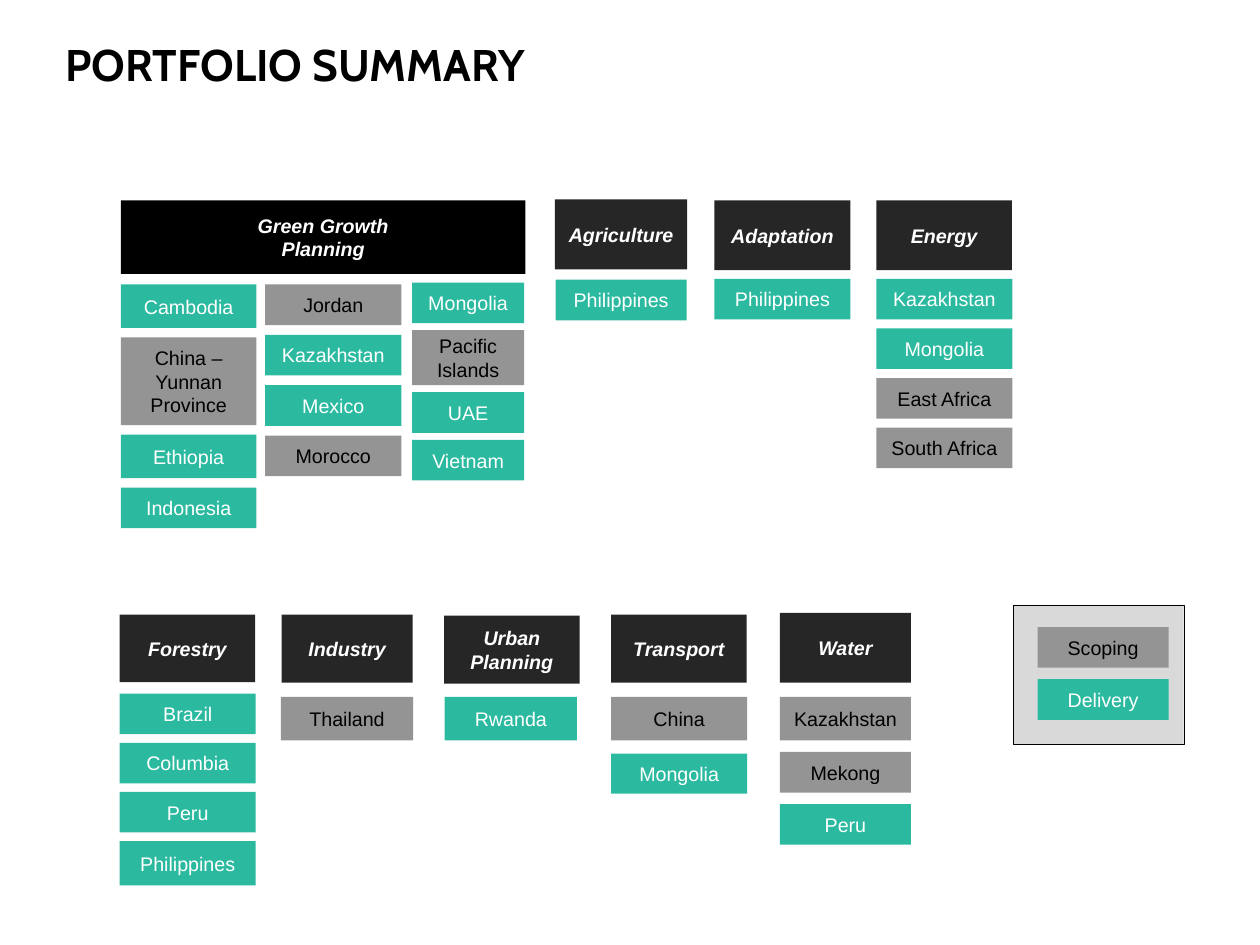
"""Build the portfolio summary slide: countries grouped by sector, coloured by phase."""
from pptx import Presentation
from pptx.dml.color import RGBColor
from pptx.enum.shapes import MSO_SHAPE
from pptx.enum.text import MSO_ANCHOR, PP_ALIGN
from pptx.util import Inches, Pt

BLACK = RGBColor(0x00, 0x00, 0x00)
WHITE = RGBColor(0xFF, 0xFF, 0xFF)
CHARCOAL = RGBColor(0x26, 0x26, 0x26)
GREY = RGBColor(0x94, 0x94, 0x94)
PALE_GREY = RGBColor(0xD9, 0xD9, 0xD9)
TEAL = RGBColor(0x2B, 0xBA, 0xA0)

SCOPING = (GREY, BLACK)
DELIVERY = (TEAL, WHITE)

presentation = Presentation()
presentation.slide_width = Inches(14.22)
presentation.slide_height = Inches(10.67)
slide = presentation.slides.add_slide(presentation.slide_layouts[6])
percent_x = presentation.slide_width / 100
percent_y = presentation.slide_height / 100


def write(frame, text, size=16, font="Arial", color=WHITE, bold=False,
          italic=False, align=PP_ALIGN.CENTER, line_spacing=None):
    frame.word_wrap = True
    frame.vertical_anchor = MSO_ANCHOR.MIDDLE
    frame.text = text
    for paragraph in frame.paragraphs:
        paragraph.alignment = align
        paragraph.line_spacing = line_spacing
        paragraph.font.size = Pt(size)
        paragraph.font.name = font
        paragraph.font.color.rgb = color
        paragraph.font.bold = bold
        paragraph.font.italic = italic


def add_box(left, top, width, height, fill):
    """Add a plain rectangle, measured in percent of the slide."""
    box = slide.shapes.add_shape(
        MSO_SHAPE.RECTANGLE, int(left * percent_x), int(top * percent_y),
        int(width * percent_x), int(height * percent_y))
    box.shadow.inherit = False
    box.fill.solid()
    box.fill.fore_color.rgb = fill
    box.line.fill.background()
    return box


title = slide.shapes.add_textbox(
    int(5.2 * percent_x), int(2.7 * percent_y),
    int(65 * percent_x), int(5.3 * percent_y))
title_frame = title.text_frame
title_frame.margin_left = title_frame.margin_right = 0
title_frame.margin_top = title_frame.margin_bottom = 0
write(title_frame, "PORTFOLIO SUMMARY", size=36, font="Cabin", color=BLACK,
      bold=True, align=PP_ALIGN.LEFT, line_spacing=1.5)

legend_panel = add_box(80.45, 64, 13.5, 14.8, PALE_GREY)
legend_panel.line.color.rgb = BLACK
legend_panel.line.width = Pt(0.25)

# Sector name, left, top, width, height, fill
sectors = [
    ("Green Growth\nPlanning", 9.6, 21.2, 32.1, 7.8, BLACK),
    ("Agriculture", 44.05, 21.1, 10.5, 7.4, CHARCOAL),
    ("Adaptation", 56.7, 21.2, 10.8, 7.4, CHARCOAL),
    ("Energy", 69.55, 21.2, 10.75, 7.4, CHARCOAL),
    ("Forestry", 9.5, 65.05, 10.75, 7.15, CHARCOAL),
    ("Industry", 22.35, 65.05, 10.4, 7.2, CHARCOAL),
    ("Urban Planning", 35.25, 65.15, 10.75, 7.2, CHARCOAL),
    ("Transport", 48.5, 65.05, 10.75, 7.2, CHARCOAL),
    ("Water", 61.9, 64.85, 10.4, 7.4, CHARCOAL),
]
for sector, left, top, width, height, fill in sectors:
    write(add_box(left, top, width, height, fill).text_frame, sector,
          bold=True, italic=True)

# Left, top, width and gap of each stack, then its country, phase and height
stacks = [
    (9.6, 30.1, 10.75, 1.0, [
        ("Cambodia", DELIVERY, 4.6), ("China – Yunnan Province", SCOPING, 9.3),
        ("Ethiopia", DELIVERY, 4.6), ("Indonesia", DELIVERY, 4.3)]),
    (21.05, 30.1, 10.8, 1.03, [
        ("Jordan", SCOPING, 4.3), ("Kazakhstan", DELIVERY, 4.3),
        ("Mexico", DELIVERY, 4.3), ("Morocco", SCOPING, 4.3)]),
    (32.7, 29.9, 8.9, 0.75, [
        ("Mongolia", DELIVERY, 4.3), ("Pacific Islands", SCOPING, 5.8),
        ("UAE", DELIVERY, 4.3), ("Vietnam", DELIVERY, 4.3)]),
    (44.1, 29.6, 10.4, 1, [("Philippines", DELIVERY, 4.3)]),
    (56.7, 29.5, 10.8, 1, [("Philippines", DELIVERY, 4.3)]),
    (69.55, 29.5, 10.8, 0.95, [
        ("Kazakhstan", DELIVERY, 4.3), ("Mongolia", DELIVERY, 4.3),
        ("East Africa", SCOPING, 4.3), ("South Africa", SCOPING, 4.3)]),
    (9.5, 73.4, 10.8, 0.9, [
        ("Brazil", DELIVERY, 4.3), ("Columbia", DELIVERY, 4.3),
        ("Peru", DELIVERY, 4.3), ("Philippines", DELIVERY, 4.7)]),
    (22.3, 73.75, 10.5, 1, [("Thailand", SCOPING, 4.6)]),
    (35.3, 73.75, 10.5, 1, [("Rwanda", DELIVERY, 4.6)]),
    (48.5, 73.75, 10.8, 1.4, [
        ("China", SCOPING, 4.6), ("Mongolia", DELIVERY, 4.25)]),
    (61.9, 73.75, 10.4, 1.22, [
        ("Kazakhstan", SCOPING, 4.6), ("Mekong", SCOPING, 4.3),
        ("Peru", DELIVERY, 4.3)]),
    (82.35, 66.35, 10.4, 1.22, [
        ("Scoping", SCOPING, 4.3), ("Delivery", DELIVERY, 4.3)]),
]
for left, top, width, gap, entries in stacks:
    for label, (fill, text_color), height in entries:
        write(add_box(left, top, width, height, fill).text_frame, label,
              color=text_color)
        top += height + gap

presentation.save("out.pptx")
